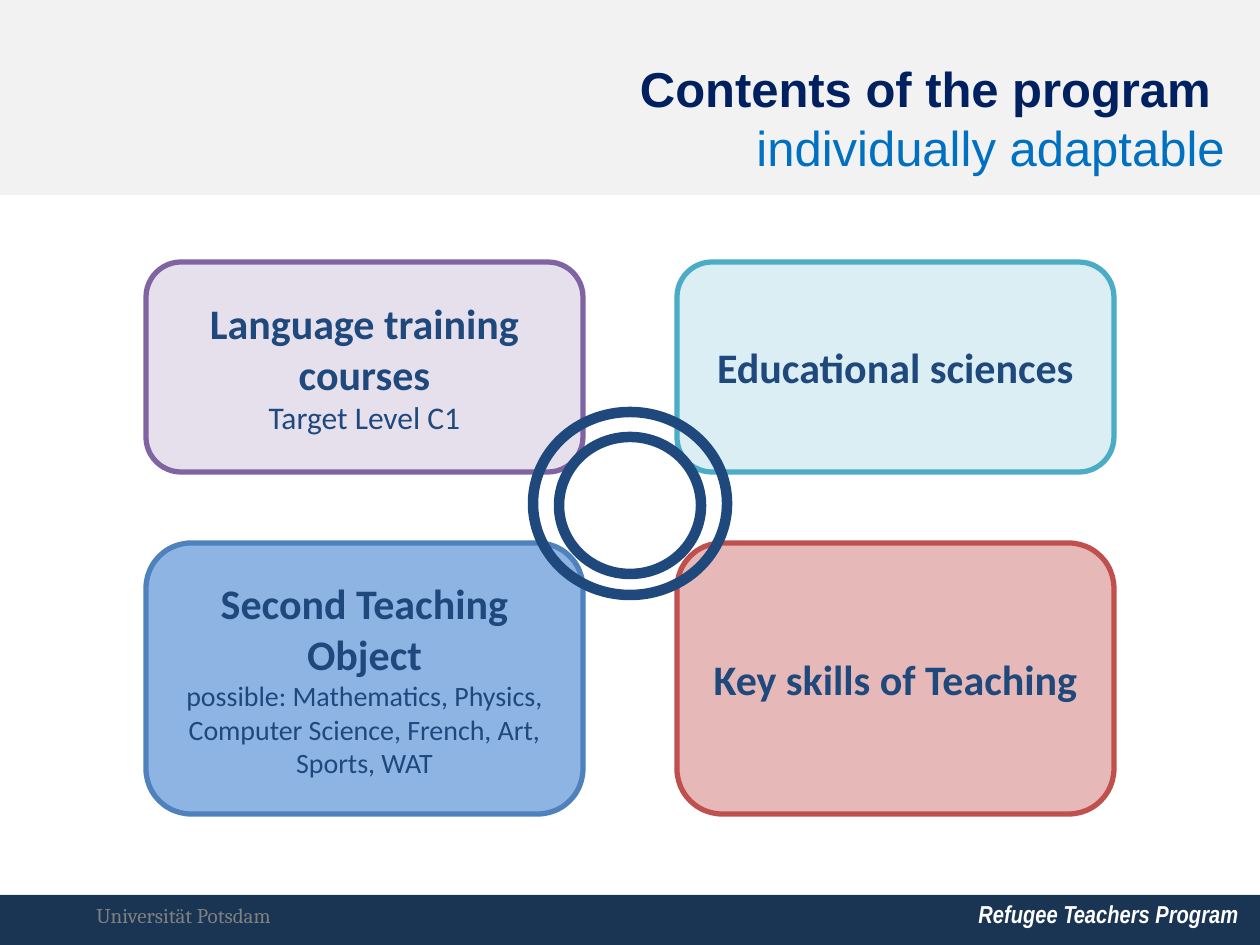
from pptx import Presentation
from pptx.dml.color import RGBColor
from pptx.enum.shapes import MSO_SHAPE as Preset
from pptx.enum.text import MSO_ANCHOR as Anchor, MSO_AUTO_SIZE as AutoSize, PP_ALIGN as Align
from pptx.util import Pt

EMU_PER_PX = 914400 / 126
NAVY = "1F497D"
CARD_LEFTS = (146, 677)
CARD_ROWS = ((262, 210), (543, 271))
CARD_WIDTH = 437


def px(*lengths):
    """Turn pixel lengths into EMU."""
    return [round(length * EMU_PER_PX) for length in lengths]


def color(hex_code):
    return RGBColor.from_string(hex_code)


def add_shape(slide, preset, box, fill=None, line=None, line_width=0):
    shape = slide.shapes.add_shape(preset, *px(*box))
    shape.shadow.inherit = False
    if fill:
        shape.fill.solid()
        shape.fill.fore_color.rgb = color(fill)
    else:
        shape.fill.background()
    if line:
        shape.line.color.rgb = color(line)
        shape.line.width = Pt(line_width)
    else:
        shape.line.fill.background()
    return shape


def write_lines(frame, lines, font_name, align=Align.LEFT):
    """Fill a frame with one paragraph per (text, size, colour, bold, italic)."""
    for index, (text, size, hex_code, bold, italic) in enumerate(lines):
        paragraph = frame.add_paragraph() if index else frame.paragraphs[0]
        paragraph.alignment = align
        run = paragraph.add_run()
        run.text = text
        run.font.name = font_name
        run.font.size = Pt(size)
        run.font.color.rgb = color(hex_code)
        run.font.bold = bold
        run.font.italic = italic


def add_label(slide, box, line, font_name, anchor=Anchor.TOP, wrap=True):
    frame = slide.shapes.add_textbox(*px(*box)).text_frame
    frame.word_wrap = wrap
    frame.vertical_anchor = anchor
    write_lines(frame, [line], font_name)


def set_title(slide):
    title = slide.shapes.title
    title.left, title.top, title.width, title.height = px(315, 52, 922, 131)
    frame = title.text_frame
    frame.word_wrap = True
    frame.auto_size = AutoSize.NONE
    frame.vertical_anchor = Anchor.TOP
    write_lines(frame, [
        ("Contents of the program ", 28, "002060", True, False),
        ("individually adaptable", 28, "0070C0", False, False),
    ], "Arial", Align.RIGHT)


def add_card(slide, row, column, fill, line, heading, detail=None, detail_size=0):
    top, height = CARD_ROWS[row]
    box = (CARD_LEFTS[column], top, CARD_WIDTH, height)
    frame = add_shape(slide, Preset.ROUNDED_RECTANGLE, box, fill, line, 3).text_frame
    frame.word_wrap = True
    frame.vertical_anchor = Anchor.MIDDLE
    lines = [(heading, 24, NAVY, True, False)]
    if detail:
        lines.append((detail, detail_size, NAVY, False, False))
    write_lines(frame, lines, "Calibri", Align.CENTER)


def main():
    presentation = Presentation()
    presentation.slide_width, presentation.slide_height = px(1260, 945)
    title_only = presentation.slide_layouts[5]
    slide = presentation.slides.add_slide(title_only)

    header = add_shape(slide, Preset.RECTANGLE, (0, 0, 1260, 195), "F2F2F2")
    slide.shapes.title.element.addprevious(header.element)
    set_title(slide)

    add_shape(slide, Preset.RECTANGLE, (0, 895, 1260, 50), "193553")
    add_label(slide, (84, 890, 556, 50),
              ("Universität Potsdam", 12, "808080", False, False), "Cambria", Anchor.MIDDLE)
    add_label(slide, (966, 893, 294, 43),
              ("Refugee Teachers Program", 14, "FFFFFF", True, True), "Arial Narrow", wrap=False)

    add_card(slide, 0, 0, "E6E0EC", "8064A2", "Language training courses", "Target Level C1", 18)
    add_card(slide, 0, 1, "DBEEF4", "4BACC6", "Educational sciences")
    add_card(slide, 1, 0, "8EB4E3", "4F81BD", "Second Teaching Object",
             "possible: Mathematics, Physics, Computer Science, French, Art, Sports, WAT", 16)
    add_card(slide, 1, 1, "E6B9B8", "C0504D", "Key skills of Teaching")

    for ring in ((533, 412, 194, 183), (559, 437, 142, 137)):
        add_shape(slide, Preset.OVAL, ring, line=NAVY, line_width=6)

    presentation.save("out.pptx")


if __name__ == "__main__":
    main()
